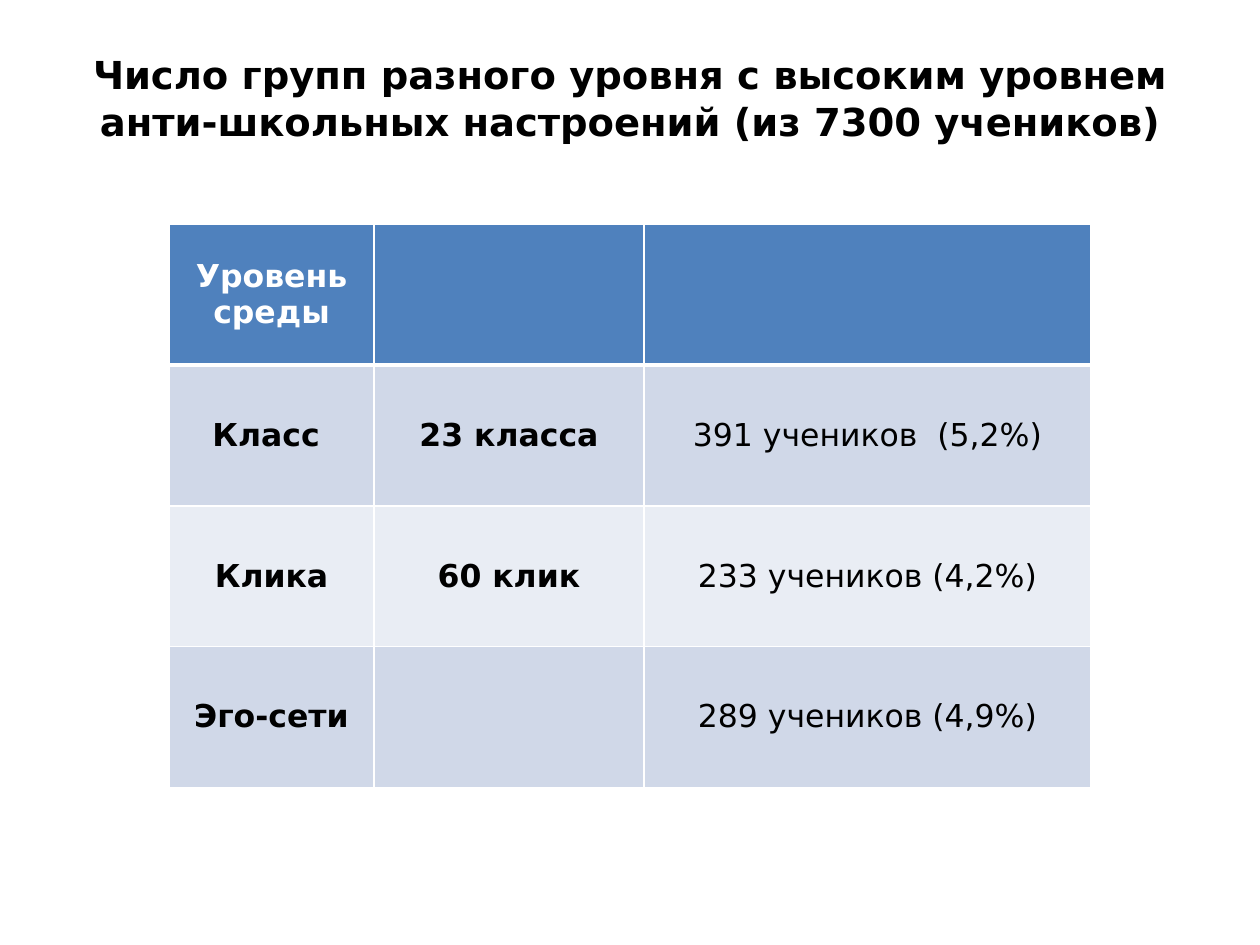
import pptx
import pptx.util
from pptx.dml.color import RGBColor
from pptx.enum.text import MSO_ANCHOR, PP_ALIGN
from pptx.oxml import parse_xml
from pptx.oxml.ns import nsdecls

Inches, Pt = pptx.util.Inches, pptx.util.Pt
FONT = "DejaVu Sans"
COLORS = {"text": "000000", "white": "FFFFFF", "header": "4F81BD",
          "odd": "D0D8E8", "even": "E9EDF4"}
TITLE = "Число групп разного уровня с высоким уровнем анти-школьных настроений (из 7300 учеников)"
ROWS = [
    ["Уровень среды", "", ""],
    ["Класс ", "23 класса", "391 учеников  (5,2%)"],
    ["Клика", "60 клик", "233 учеников (4,2%)"],
    ["Эго-сети", "", "289 учеников (4,9%)"],
]
COL_WIDTHS = [1.63, 2.14, 3.55]


def rgb(name):
    """Return the named palette colour."""
    return RGBColor.from_string(COLORS[name])


def write(tf, text, size, color, bold):
    """Put one centred paragraph into a text frame."""
    p = tf.paragraphs[0]
    p.text = text
    p.alignment = PP_ALIGN.CENTER
    p.font.name, p.font.size, p.font.bold = FONT, Pt(size), bold
    p.font.color.rgb = rgb(color)


def set_borders(cell, widths):
    """Draw white cell borders with the given widths in points by side."""
    tcPr = cell._tc.get_or_add_tcPr()
    for side, width in widths.items():
        tcPr.append(parse_xml(
            f'<a:ln{side} {nsdecls("a")} w="{Pt(width)}"><a:solidFill>'
            f'<a:srgbClr val="{COLORS["white"]}"/></a:solidFill></a:ln{side}>'))


def add_title(s, x, y, w, h):
    """Add the slide heading in the given box."""
    tf = s.shapes.add_textbox(Inches(x), Inches(y), Inches(w), Inches(h)).text_frame
    tf.word_wrap = True
    write(tf, TITLE, 22, "text", True)


def add_level_table(s, x, y, w, h):
    """Add the table of group levels in the given box."""
    table = s.shapes.add_table(len(ROWS), len(COL_WIDTHS), Inches(x), Inches(y),
                               Inches(w), Inches(h)).table
    for col, width in zip(table.columns, COL_WIDTHS):
        col.width = Inches(width)
    for i, row in enumerate(ROWS):
        fill = "header" if i == 0 else "odd" if i % 2 else "even"
        for j, text in enumerate(row):
            cell = table.cell(i, j)
            set_borders(cell, {"L": 1, "R": 1, "T": 3 if i == 1 else 1,
                               "B": 3 if i == 0 else 1})
            cell.fill.solid()
            cell.fill.fore_color.rgb = rgb(fill)
            cell.vertical_anchor = MSO_ANCHOR.MIDDLE
            write(cell.text_frame, text, 18, "text" if i else "white", j < 2)


def main():
    """Build and save the slide."""
    prs = pptx.Presentation()
    prs.slide_width, prs.slide_height = Inches(10), Inches(7.5)
    s = prs.slides.add_slide(prs.slide_layouts[6])
    add_title(s, 0.2, 0.36, 9.6, 0.84)
    add_level_table(s, 1.34, 1.78, sum(COL_WIDTHS), 4.47)
    prs.save("out.pptx")


if __name__ == "__main__":
    main()
